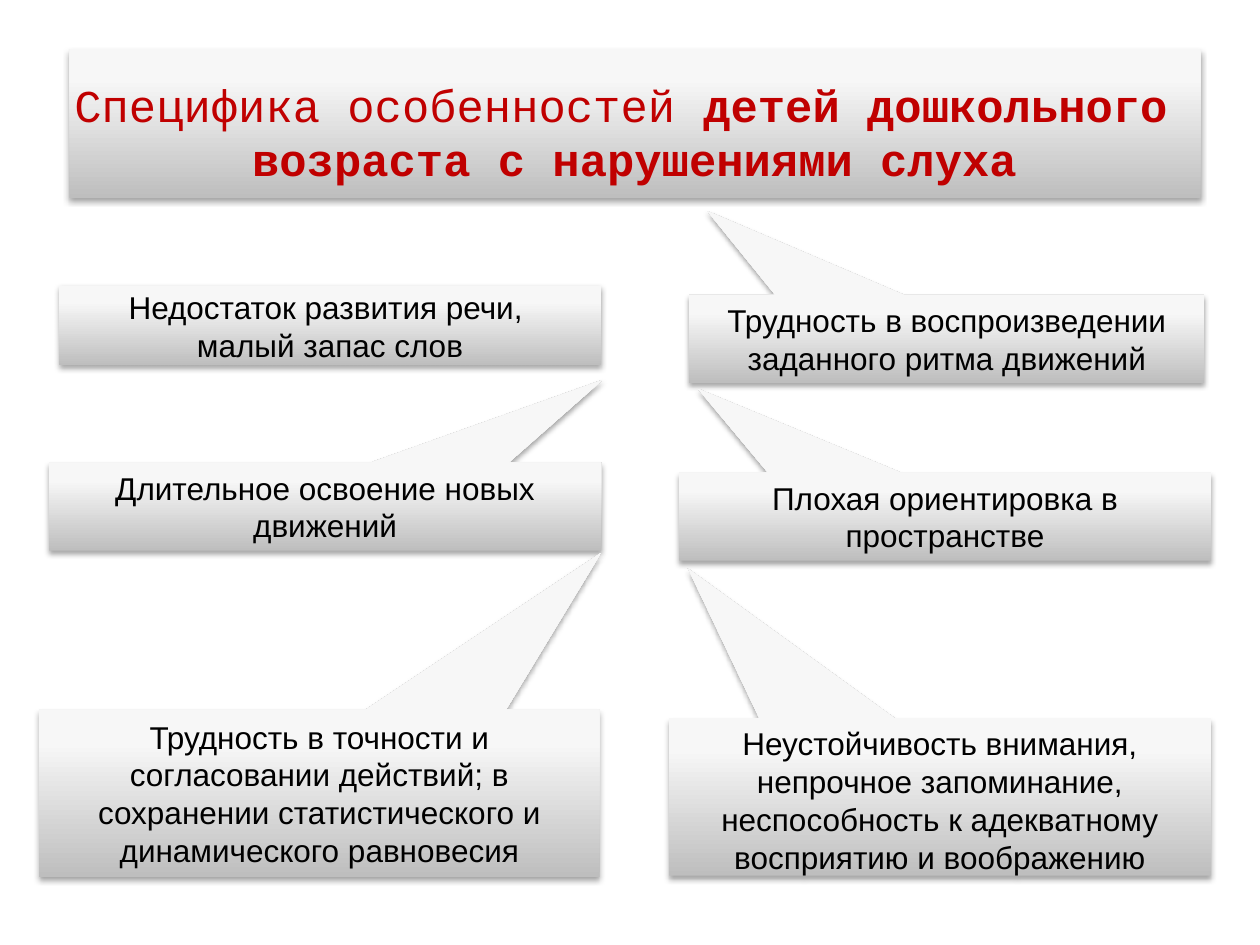
"""Build a slide on the traits of preschool children with impaired hearing."""
from dataclasses import dataclass

from lxml.etree import SubElement
from pptx import Presentation
from pptx.dml.color import RGBColor
from pptx.enum.shapes import MSO_SHAPE
from pptx.enum.text import MSO_ANCHOR, PP_ALIGN
from pptx.oxml.ns import qn
from pptx.shapes.autoshape import Shape
from pptx.slide import Slide
from pptx.text.text import _Paragraph
from pptx.util import Inches, Pt

COLORS = {"dark": "BEBEBE", "light": "F7F7F7", "shadow": "000000", "heading": "C00000", "body": "000000"}
LEFT_TAIL = (0.503, -1.436)
RIGHT_TAIL = (-0.465, -1.451)


@dataclass(frozen=True)
class Trait:
    """A described trait and the place of its panel, in inches."""

    lines: tuple[str, ...]
    left: float
    top: float
    width: float
    height: float
    tail: tuple[float, float] | None
    anchor: MSO_ANCHOR = MSO_ANCHOR.MIDDLE


TRAITS = (
    Trait(("Недостаток развития речи, ", "малый запас слов"), 0.47, 2.27, 4.3, 0.63, None),
    Trait(("Длительное освоение новых движений",), 0.39, 3.67, 4.38, 0.7, LEFT_TAIL),
    Trait(("Трудность в воспроизведении заданного ритма движений",),
          5.47, 2.34, 4.09, 0.7, RIGHT_TAIL, MSO_ANCHOR.TOP),
    Trait(("Плохая ориентировка в пространстве",), 5.39, 3.75, 4.22, 0.7, RIGHT_TAIL, MSO_ANCHOR.TOP),
    Trait(("Трудность в точности и согласовании действий; в сохранении "
           "статистического и динамического равновесия",), 0.31, 5.63, 4.45, 1.33, LEFT_TAIL),
    Trait(("Неустойчивость внимания, непрочное запоминание, неспособность "
           "к адекватному восприятию и воображению",),
          5.31, 5.7, 4.3, 1.25, RIGHT_TAIL, MSO_ANCHOR.TOP),
)
HEADING = (
    (("Специфика особенностей ", False), ("детей дошкольного ", True)),
    (("возраста с нарушениями слуха", True),),
)


def add_panel(slide: Slide, kind: MSO_SHAPE, left: float, top: float, width: float, height: float) -> Shape:
    """Add a grey gradient panel with a soft shadow below it."""
    panel = slide.shapes.add_shape(kind, Inches(left), Inches(top), Inches(width), Inches(height))
    panel.fill.gradient()
    panel.fill.gradient_angle = 90
    for stop, tone, position in zip(panel.fill.gradient_stops, ("dark", "light"), (0, 0.8)):
        stop.color.rgb = RGBColor.from_string(COLORS[tone])
        stop.position = position
    panel.line.fill.background()
    panel.shadow.inherit = False
    effects = panel.element.spPr.find(qn("a:effectLst"))
    shadow = SubElement(effects, qn("a:outerShdw"), blurRad=str(Pt(3.1)), dist=str(Pt(1.8)),
                        dir="5400000", rotWithShape="0")
    tint = SubElement(shadow, qn("a:srgbClr"), val=COLORS["shadow"])
    SubElement(tint, qn("a:alpha"), val="35000")
    return panel


def add_run(paragraph: _Paragraph, text: str, font: str, size: float, color: str, bold: bool = False) -> None:
    """Append one styled run to a centred paragraph."""
    paragraph.alignment = PP_ALIGN.CENTER
    run = paragraph.add_run()
    run.text = text
    run.font.name = font
    run.font.size = Pt(size)
    run.font.bold = bold
    run.font.color.rgb = RGBColor.from_string(COLORS[color])


def add_heading(slide: Slide) -> None:
    """Draw the heading panel with its two lines."""
    frame = add_panel(slide, MSO_SHAPE.RECTANGLE, 0.55, 0.39, 8.98, 1.18).text_frame
    frame.word_wrap = False
    frame.vertical_anchor = MSO_ANCHOR.MIDDLE
    frame.margin_top = Inches(0.17)
    for index, line in enumerate(HEADING):
        paragraph = frame.add_paragraph() if index else frame.paragraphs[0]
        for text, bold in line:
            add_run(paragraph, text, "Courier New", 26, "heading", bold)


def add_trait(slide: Slide, trait: Trait) -> None:
    """Draw one trait, as a callout where it has a tail."""
    kind = MSO_SHAPE.RECTANGULAR_CALLOUT if trait.tail else MSO_SHAPE.RECTANGLE
    panel = add_panel(slide, kind, trait.left, trait.top, trait.width, trait.height)
    for index, offset in enumerate(trait.tail or ()):
        panel.adjustments[index] = offset
    frame = panel.text_frame
    frame.word_wrap = True
    frame.vertical_anchor = trait.anchor
    paragraph = frame.paragraphs[0]
    for index, line in enumerate(trait.lines):
        if index:
            paragraph.add_line_break()
        add_run(paragraph, line, "Arial", 18, "body")


def main() -> None:
    """Build and save the presentation."""
    presentation = Presentation()
    presentation.slide_width = Inches(10)
    presentation.slide_height = Inches(7.5)
    slide = presentation.slides.add_slide(presentation.slide_layouts[6])
    add_heading(slide)
    for trait in TRAITS:
        add_trait(slide, trait)
    presentation.save("out.pptx")


if __name__ == "__main__":
    main()
